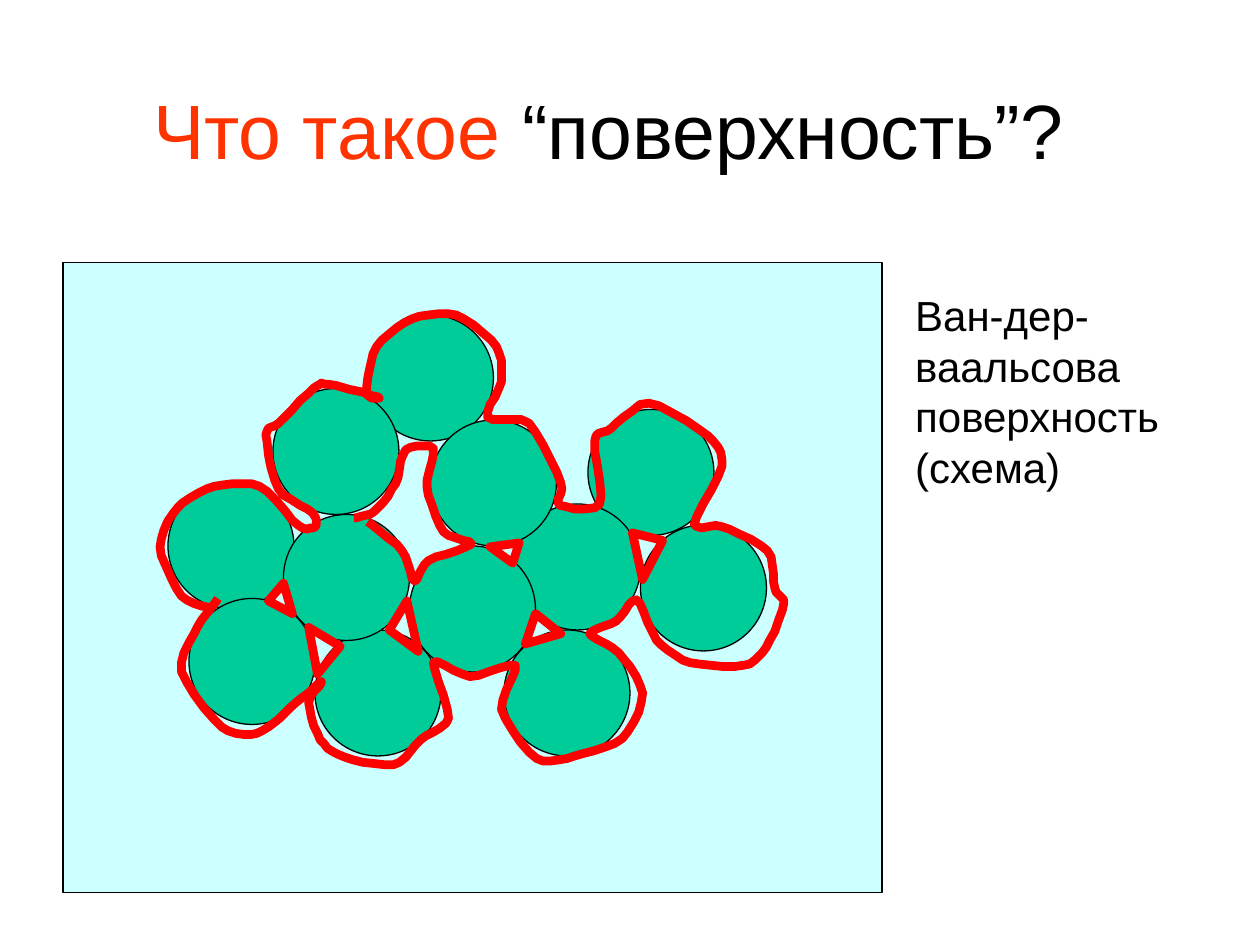
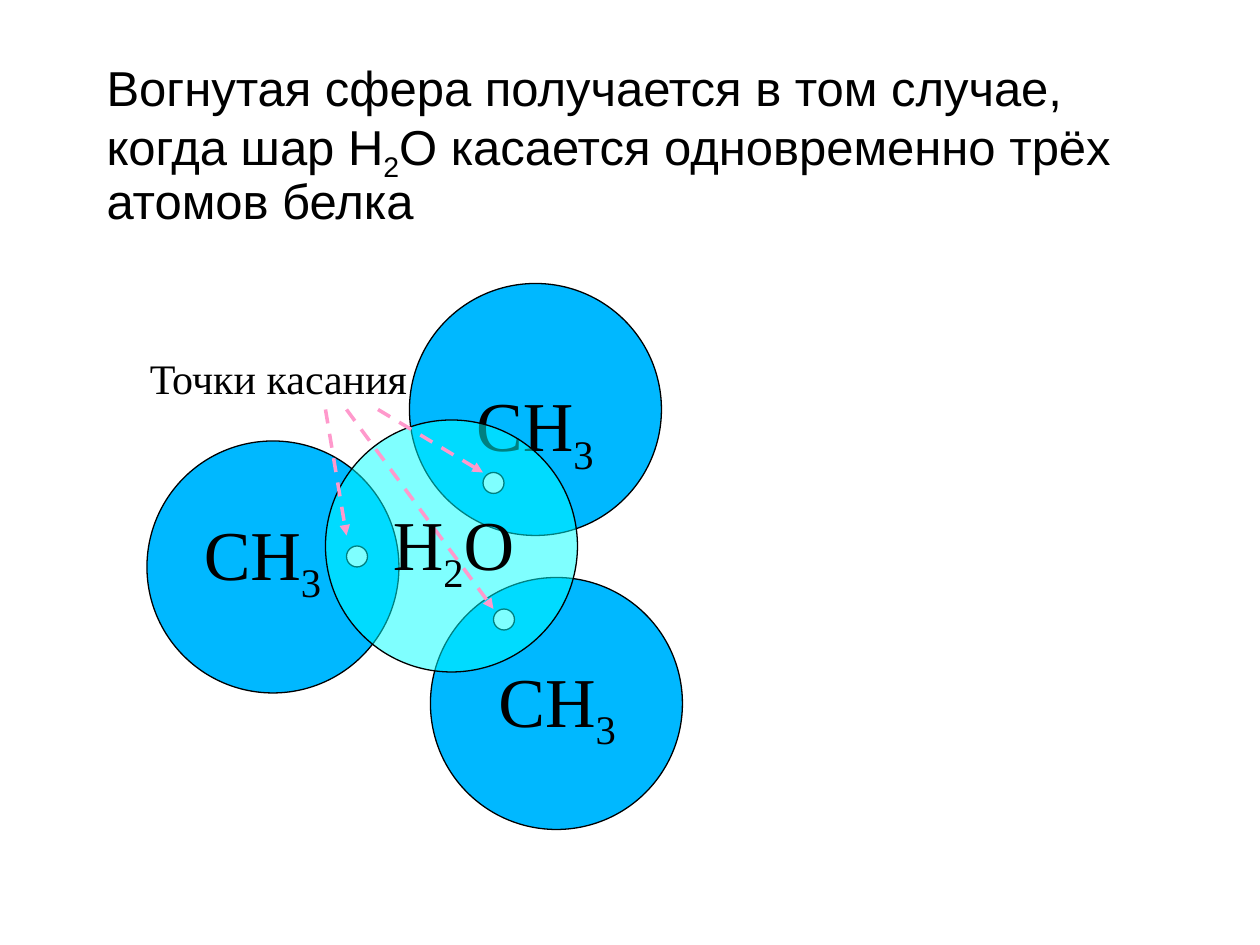
from lxml.etree import SubElement
from pptx import Presentation
from pptx.dml.color import RGBColor
from pptx.enum.dml import MSO_LINE
from pptx.enum.shapes import MSO_CONNECTOR, MSO_SHAPE
from pptx.enum.text import MSO_ANCHOR as ANCHOR, MSO_AUTO_SIZE as AUTO_SIZE, PP_ALIGN as ALIGN
from pptx.oxml.ns import qn
from pptx.util import Cm, Pt

BLACK = RGBColor(0x00, 0x00, 0x00)
WHITE = RGBColor(0xFF, 0xFF, 0xFF)
ORANGE = RGBColor(0xFF, 0x33, 0x00)
RED = RGBColor(0xFF, 0x00, 0x00)
PALE_CYAN = RGBColor(0xCC, 0xFF, 0xFF)
GREEN = RGBColor(0x00, 0xCC, 0x99)
BLUE = RGBColor(0x00, 0xB8, 0xFF)
CYAN = RGBColor(0x00, 0xFF, 0xFF)
PINK = RGBColor(0xFF, 0x99, 0xCC)

GRID = Cm(2.54) / 12      # drawing grid: twelve steps to the inch
FINE = Cm(2.54) / 100     # outline points: hundredths of an inch

TITLE = {"size": Pt(44), "name": "Arial"}
STATEMENT = {"size": Pt(28), "name": "Arial"}
CAPTION = {"size": Pt(24), "name": "Arial"}
FORMULA = {"size": Pt(40), "name": "Times New Roman"}
POINTER = {"size": Pt(24), "name": "Times New Roman"}


def add_text(page, place, spans, font, layout=None, spacing=1.0, align=ALIGN.LEFT):
    """Write spans of (text, colour, is_subscript) in one paragraph."""
    box = page.shapes.add_textbox(*[Cm(length) for length in place])
    frame = {"word_wrap": True, "auto_size": AUTO_SIZE.SHAPE_TO_FIT_TEXT, **(layout or {})}
    for key, value in frame.items():
        setattr(box.text_frame, key, value)
    para = box.text_frame.paragraphs[0]
    para.alignment, para.line_spacing = align, spacing
    for text, colour, is_subscript in spans:
        span = para.add_run()
        span.text = text
        for key, value in font.items():
            setattr(span.font, key, value)
        span.font.color.rgb = colour
        if is_subscript:
            span.font._element.set("baseline", "-25000")


def add_figure(page, kind, left, top, width, height, fill):
    """Draw a filled shape with a thin black edge, placed in grid steps."""
    figure = page.shapes.add_shape(kind, *[round(n * GRID) for n in (left, top, width, height)])
    figure.shadow.inherit = False
    figure.fill.solid()
    figure.fill.fore_color.rgb = fill
    figure.line.color.rgb = BLACK
    figure.line.width = Pt(0.75)
    return figure


deck = Presentation()
deck.slide_width, deck.slide_height = Cm(25.4), Cm(19.05)
blank = deck.slide_layouts[6]

# Slide 1: van der Waals surface
page = deck.slides.add_slide(blank)
add_text(page, (1.47, 1.7, 21.59, 1.98),
         [("Что такое ", ORANGE, False), ("“поверхность”?", BLACK, False)],
         TITLE, {"vertical_anchor": ANCHOR.MIDDLE}, 0.93, ALIGN.CENTER)
add_figure(page, MSO_SHAPE.RECTANGLE, 6, 25, 78, 60, PALE_CYAN)

# Atoms
atoms = [(61, 50), (48, 60), (16, 46), (30, 60), (18, 57), (56, 39),
         (49, 48), (35, 30), (27, 49), (39, 52), (26, 37), (41, 40)]
for left, top in atoms:
    add_figure(page, MSO_SHAPE.OVAL, left, top, 12, 12, GREEN)

# Surface outlines: the outer contour, the inner cavity, then the small gaps
outer_contour = [
    (169, 483), (144, 473), (127, 434), (141, 403), (170, 386), (206, 386), (237, 417),
    (250, 418), (248, 407), (221, 388), (211, 345), (221, 336), (249, 308), (261, 305),
    (300, 315), (291, 312), (299, 275), (327, 253), (362, 250), (394, 275), (398, 303),
    (387, 331), (420, 336), (445, 383), (444, 401), (476, 400), (472, 350), (485, 340),
    (515, 320), (562, 346), (573, 370), (551, 416), (573, 418), (609, 437), (615, 467),
    (622, 479), (608, 514), (590, 528), (548, 526), (521, 508), (505, 476), (489, 493),
    (468, 503), (491, 518), (510, 550), (494, 586), (456, 600), (426, 602), (398, 563),
    (409, 528), (373, 537), (344, 526), (356, 570), (334, 587), (312, 607), (274, 601),
    (254, 587), (245, 558), (255, 541), (226, 566), (204, 582), (176, 577), (144, 533),
    (157, 497), (173, 475)]
cavity = [(281, 411), (297, 406), (314, 384), (322, 357), (344, 356), (339, 387),
          (352, 422), (374, 432), (340, 445), (329, 461), (319, 437), (292, 414)]
small_gaps = [[(309, 500), (323, 477), (332, 517)], [(425, 487), (417, 511), (445, 503)],
              [(502, 423), (526, 429), (510, 460)], [(225, 463), (213, 477), (232, 487)],
              [(245, 498), (252, 535), (270, 513)], [(389, 434), (412, 431), (407, 447)]]
STEPS = 5
for points in [outer_contour, cavity, *small_gaps]:
    is_gap = len(points) == 3
    trail = list(points)
    if not is_gap:
        # Round the line with a spline through each four neighbours
        padded = [points[0], *points, points[-1]]
        trail = [points[0]]
        for before, start, end, after in zip(padded, padded[1:], padded[2:], padded[3:]):
            for step in range(1, STEPS + 1):
                t = step / STEPS
                trail.append(tuple(
                    b + (c - b) * t * t * (3 - 2 * t)
                    + 0.4 * t * (1 - t) * ((c - a) * (1 - t) - (d - b) * t)
                    for a, b, c, d in zip(before, start, end, after)))
    builder = page.shapes.build_freeform(*trail[0], scale=FINE)
    builder.add_line_segments(trail[1:], close=is_gap)
    outline = builder.convert_to_shape()
    outline.shadow.inherit = False
    outline.fill.background()
    outline.line.color.rgb = RED
    outline.line.width = Pt(5)

add_text(page, (18.2, 5.72, 6.78, 4.37),
         [("Ван-дер-ваальсова поверхность (схема)", BLACK, False)], CAPTION)

# Slide 2: water sphere touching three protein atoms
page = deck.slides.add_slide(blank)
add_text(page, (1.9, 0.64, 21.59, 4.65),
         [("Вогнутая сфера получается в том случае, когда шар H", BLACK, False),
          ("2", BLACK, True),
          ("O касается одновременно трёх атомов белка", BLACK, False)],
         STATEMENT, {"vertical_anchor": ANCHOR.MIDDLE, "auto_size": AUTO_SIZE.NONE}, 0.9)

# Methyl groups and their labels
for left, top in [(14, 42), (41, 55), (39, 27)]:
    add_figure(page, MSO_SHAPE.OVAL, left, top, 24, 24, BLUE)
for left, top in [(3.86, 10.16), (9.35, 7.57), (9.8, 13.13)]:
    add_text(page, (left, top, 2.87, 2.18), [("CH", BLACK, False), ("3", BLACK, True)],
             FORMULA, {"word_wrap": False})

# Contact points under the half-transparent water sphere
for left, top in [(47, 58), (33, 52), (46, 45)]:
    add_figure(page, MSO_SHAPE.OVAL, left, top, 2, 2, WHITE)
water = add_figure(page, MSO_SHAPE.OVAL, 31, 40, 24, 24, CYAN)
water_colour = water._element.spPr.find(qn("a:solidFill")).find(qn("a:srgbClr"))
SubElement(water_colour, qn("a:alpha"), val="50000")

# Pointer label and dashed arrows
add_text(page, (2.77, 6.99, 5.79, 1.27), [("Точки касания", BLACK, False)],
         POINTER, {"word_wrap": False})
for ends in [(36, 39, 46, 45), (33, 39, 47, 58), (31, 39, 33, 51)]:
    arrow = page.shapes.add_connector(MSO_CONNECTOR.STRAIGHT, *[round(n * GRID) for n in ends])
    arrow.line.color.rgb = PINK
    arrow.line.width = Pt(2)
    arrow.line.dash_style = MSO_LINE.DASH
    SubElement(arrow._element.spPr.find(qn("a:ln")), qn("a:tailEnd"), type="triangle")
    SubElement(arrow._element.spPr, qn("a:effectLst"))

add_text(page, (7.67, 9.96, 2.95, 2.18),
         [("H", BLACK, False), ("2", BLACK, True), ("O", BLACK, False)],
         FORMULA, {"word_wrap": False})

deck.save("out.pptx")
